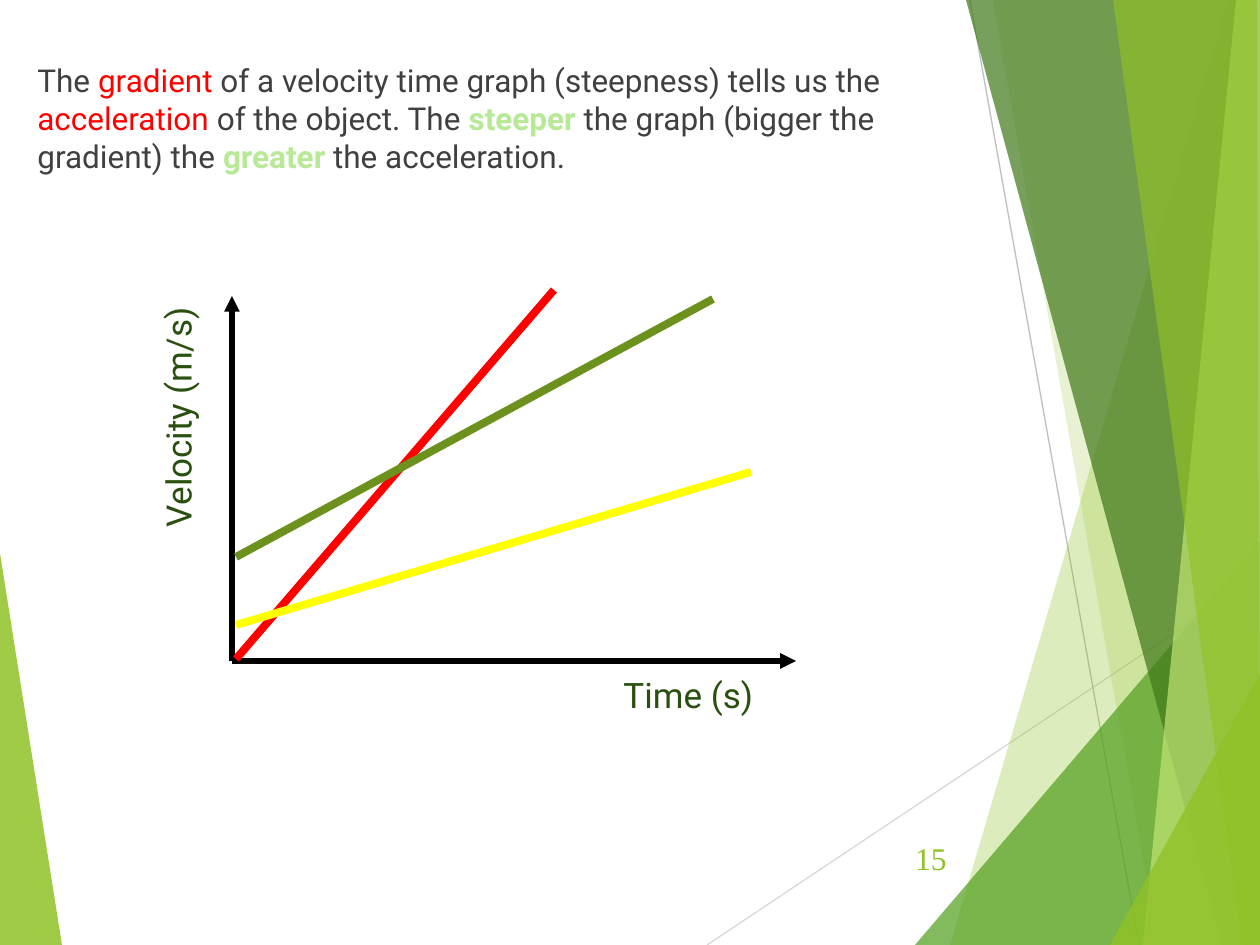
"""Builds a slide on how the gradient of a velocity time graph gives acceleration."""
from lxml.etree import SubElement
from pptx import Presentation
from pptx.dml.color import RGBColor
from pptx.enum.shapes import MSO_CONNECTOR
from pptx.enum.text import MSO_ANCHOR, PP_ALIGN
from pptx.oxml.ns import qn
from pptx.util import Pt

EMU_PER_PX = 914400 / 126
WIDTH, HEIGHT = 1260, 945
COLORS = {
    "lime": "90C226", "green": "54A021", "forest": "3F7819", "pale": "C0E474",
    "light_rule": "D9D9D9", "dark_rule": "BFBFBF", "body": "404040",
    "label": "2A5010", "emphasis": "B7E996", "axis": "000000",
    "red": "FF0000", "olive": "6C921D", "yellow": "FFFF00",
}


def px(length):
    return round(length * EMU_PER_PX)


def rgb(name):
    return RGBColor.from_string(COLORS[name])


class GraphSlide:
    def __init__(self, presentation, font="Roboto"):
        self.slide = presentation.slides.add_slide(presentation.slide_layouts[6])
        self.shapes = self.slide.shapes
        self.font = font

    def facet(self, points, color, opacity):
        builder = self.shapes.build_freeform(*points[0], scale=EMU_PER_PX)
        builder.add_line_segments(points[1:], close=True)
        facet = builder.convert_to_shape()
        facet.shadow.inherit = False
        facet.fill.solid()
        facet.fill.fore_color.rgb = rgb(color)
        facet.line.fill.background()
        tint = facet.fill._xPr.find(qn("a:solidFill"))[0]
        SubElement(tint, qn("a:alpha"), val=str(opacity * 1000))

    def line(self, start, end, color, weight, arrow=False):
        line = self.shapes.add_connector(
            MSO_CONNECTOR.STRAIGHT, *map(px, (*start, *end)))
        line.line.color.rgb = rgb(color)
        line.line.width = Pt(weight)
        if arrow:
            SubElement(line.line._get_or_add_ln(), qn("a:tailEnd"), type="triangle")
        SubElement(line._element.spPr, qn("a:effectLst"))

    def text(self, box, runs, size, color, font=None, align=PP_ALIGN.LEFT,
             anchor=MSO_ANCHOR.TOP, rotation=0):
        textbox = self.shapes.add_textbox(*map(px, box))
        textbox.rotation = rotation
        frame = textbox.text_frame
        frame.word_wrap = True
        frame.vertical_anchor = anchor
        paragraph = frame.paragraphs[0]
        paragraph.alignment = align
        paragraph.font.name = font or self.font
        paragraph.font.size = Pt(size)
        paragraph.font.color.rgb = rgb(color)
        for wording, highlight in runs:
            run = paragraph.add_run()
            run.text = wording
            if highlight:
                run.font.color.rgb = rgb(highlight)
                run.font.bold = highlight == "emphasis"


def main():
    presentation = Presentation()
    presentation.slide_width, presentation.slide_height = px(WIDTH), px(HEIGHT)
    graph = GraphSlide(presentation)

    graph.facet([(0, 553), (62, HEIGHT), (0, HEIGHT)], "lime", 85)
    graph.line((707, HEIGHT), (WIDTH, 576), "light_rule", 0.75)
    graph.line((970, 0), (1139, HEIGHT), "dark_rule", 0.75)
    for top_left, bottom_left, top_right, top, color, opacity in (
        (1228, 950, WIDTH, 0, "lime", 30),
        (993, 1158, WIDTH, 0, "lime", 20),
        (WIDTH, 915, WIDTH, 541, "green", 72),
        (966, 1222, WIDTH, 0, "forest", 70),
        (1236, 1143, WIDTH, 0, "pale", 70),
        (1113, 1242, 1257, 0, "lime", 65),
        (WIDTH, 1110, WIDTH, 674, "lime", 80),
    ):
        graph.facet([(top_left, top), (bottom_left, HEIGHT), (WIDTH, HEIGHT),
                     (top_right, top)], color, opacity)

    graph.text((25, 55, 934, 318), [
        ("The ", None), ("gradient", "red"),
        (" of a velocity time graph (steepness) tells us the ", None),
        ("acceleration", "red"), (" of the object. The ", None),
        ("steeper", "emphasis"), (" the graph (bigger the gradient) the ", None),
        ("greater", "emphasis"), (" the acceleration.", None),
    ], 18, "body")
    graph.text((888, 833, 71, 50), [("15", None)], 18, "lime",
               font="Times New Roman", align=PP_ALIGN.RIGHT, anchor=MSO_ANCHOR.MIDDLE)

    origin = (232, 661)
    for axis_end in ((232, 296), (796, 661)):
        graph.line(origin, axis_end, "axis", 3, arrow=True)
    graph.text((611, 667, 319, 55), [("Time (s)", None)], 20, "label")
    graph.text((54, 388, 248, 55), [("Velocity (m/s)", None)], 20, "label", rotation=270)

    for start_y, end, color in (
        (659, (554, 290), "red"),
        (557, (713, 299), "olive"),
        (625, (751, 472), "yellow"),
    ):
        graph.line((236, start_y), end, color, 4.5)

    presentation.save("out.pptx")


if __name__ == "__main__":
    main()
